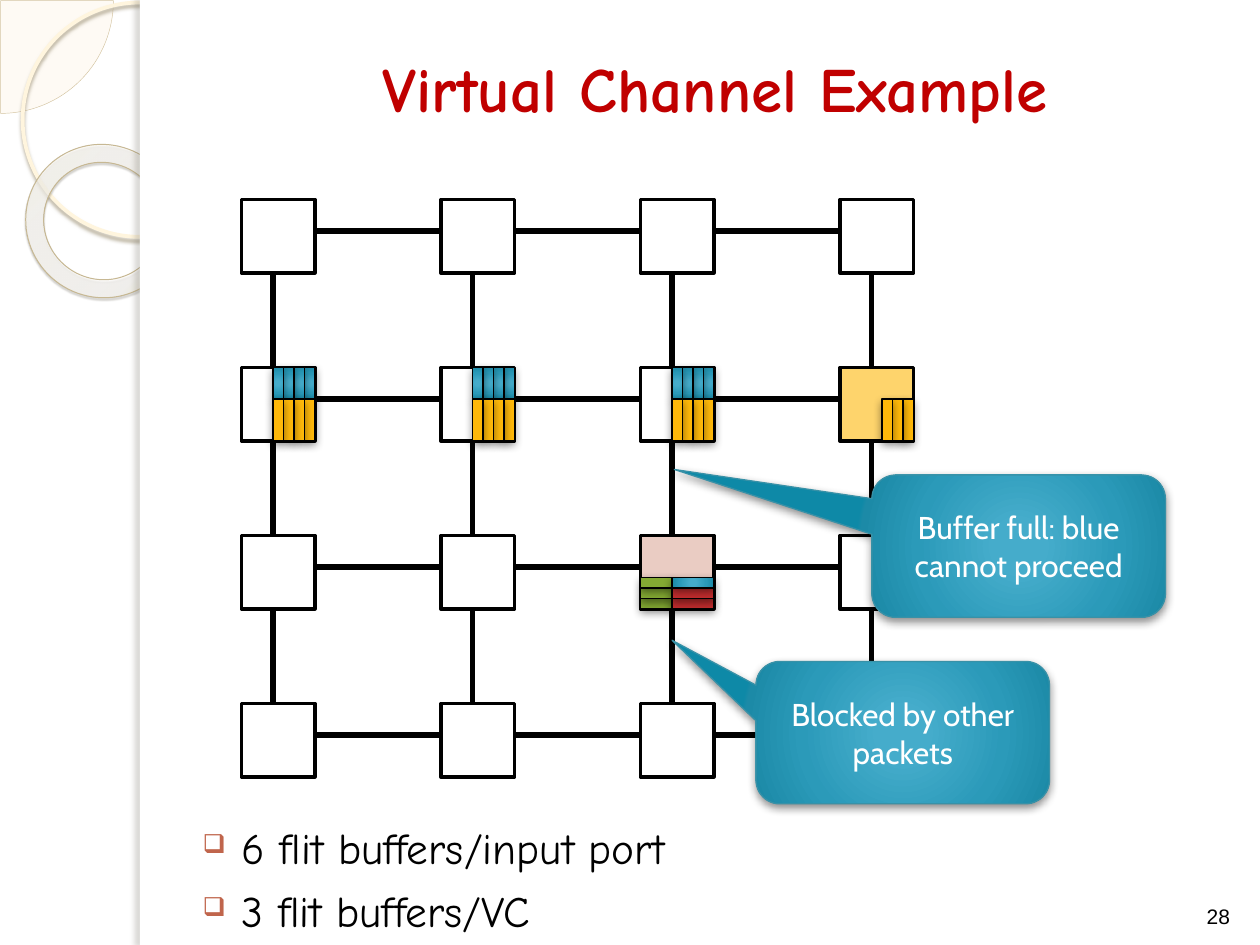
from pptx import Presentation
from pptx.dml.color import RGBColor
from pptx.enum.shapes import MSO_CONNECTOR, MSO_SHAPE as Preset
from pptx.enum.text import MSO_ANCHOR as Anchor, PP_ALIGN as Align
from pptx.oxml import parse_xml
from pptx.oxml.ns import nsdecls, qn
from pptx.oxml.xmlchemy import OxmlElement
from pptx.util import Inches, Pt

BLACK = RGBColor(0x00, 0x00, 0x00)
WHITE = RGBColor(0xFF, 0xFF, 0xFF)
TITLE_RED = RGBColor(0xC0, 0x00, 0x00)
BULLET_RED = RGBColor(0xC0, 0x65, 0x4C)
YELLOW = RGBColor(0xFE, 0xB8, 0x0A)
GREEN = RGBColor(0x84, 0xAA, 0x33)
RED = RGBColor(0xC3, 0x2D, 0x2E)
PINK_NODE = RGBColor(0xEA, 0xCC, 0xC3)
YELLOW_NODE = RGBColor(0xFE, 0xD4, 0x6C)
CALLOUT_LINE = RGBColor(0x38, 0x91, 0xA7)
PIE_FILL = RGBColor(0xFE, 0xFA, 0xF4)
PIE_LINE = RGBColor(0xD3, 0xC3, 0x9F)
RING_LINE = RGBColor(0xFF, 0xF5, 0xDE)
RING_SHADOW = RGBColor(0xB0, 0xA6, 0x8F)
DONUT_LINE = RGBColor(0xC7, 0xB8, 0x93)
DONUT_SHADOW = RGBColor(0x5A, 0x54, 0x44)
EDGE_SHADOW = RGBColor(0x73, 0x6F, 0x63)

BLUE = ([(0, "45ACCC", 100), (15, "45ACCB", 100), (62, "2B9AB9", 100),
         (97, "1C8AA7", 100), (100, "0E89A7", 100)], (50, 50, 50, 50))
CREAM = ([(0, "FFFCF6", 70), (70, "FFFEFB", 55), (100, "F0D28E", 60)],
         (-408, -50, 508, 150))
SOFT_SHADOW = (BLACK, 43, 5, 2, 90)

UNIT = 1 / 12
NODE = 7
PORT = 3
COLUMNS = [23 + 19 * index for index in range(4)]
ROWS = [19 + 16 * index for index in range(4)]


def set_gradient(shape, gradient):
    """Give a shape a circular gradient of (position, colour, opacity) stops."""
    stops, (left, top, right, bottom) = gradient
    stop_xml = "".join(
        f'<a:gs pos="{position * 1000}"><a:srgbClr val="{color}">'
        f'<a:alpha val="{opacity * 1000}"/></a:srgbClr></a:gs>'
        for position, color, opacity in stops)
    shape.fill.background()
    properties = shape._element.spPr
    properties.replace(properties.find(qn("a:noFill")), parse_xml(
        f'<a:gradFill {nsdecls("a")} rotWithShape="1"><a:gsLst>{stop_xml}</a:gsLst>'
        f'<a:path path="circle"><a:fillToRect l="{left * 1000}" t="{top * 1000}" '
        f'r="{right * 1000}" b="{bottom * 1000}"/></a:path></a:gradFill>'))


def set_shadow(shape, shadow):
    """Give a shape an outer shadow, or none."""
    shape.shadow.inherit = False
    if shadow:
        color, opacity, blur, distance, angle = shadow
        shape._element.spPr.find(qn("a:effectLst")).append(parse_xml(
            f'<a:outerShdw {nsdecls("a")} blurRad="{Pt(blur)}" dist="{Pt(distance)}" '
            f'dir="{angle * 60000}" algn="ctr" rotWithShape="0"><a:srgbClr val="{color}">'
            f'<a:alpha val="{opacity * 1000}"/></a:srgbClr></a:outerShdw>'))


def add_figure(page, preset, place, fill=None, line=None, shadow=None, adjust=()):
    """Add a preset shape with its fill, outline, shadow and adjustments."""
    shape = page.shapes.add_shape(preset, *map(Inches, place))
    for index, value in enumerate(adjust):
        shape.adjustments[index] = value
    if fill is None:
        shape.fill.background()
    elif isinstance(fill, RGBColor):
        shape.fill.solid()
        shape.fill.fore_color.rgb = fill
    else:
        set_gradient(shape, fill)
    if line:
        color, width = line
        shape.line.color.rgb = color
        shape.line.width = Pt(width)
    else:
        shape.line.fill.background()
    set_shadow(shape, shadow)
    return shape


def write(para, text, size, font, color, bold=False):
    """Add one formatted run to a paragraph."""
    span = para.add_run()
    span.text = text
    span.font.size = Pt(size)
    span.font.name = font
    span.font.color.rgb = color
    span.font.bold = bold


def add_label(page, place, anchor, *style, **options):
    """Add a text box with one centred line."""
    frame = page.shapes.add_textbox(*map(Inches, place)).text_frame
    frame.word_wrap = True
    frame.vertical_anchor = anchor
    frame.paragraphs[0].alignment = Align.CENTER
    write(frame.paragraphs[0], *style, **options)


def add_bullets(page, place, lines):
    """Add a list with square bullets."""
    frame = page.shapes.add_textbox(*map(Inches, place)).text_frame
    frame.word_wrap = True
    for index, text in enumerate(lines):
        para = frame.add_paragraph() if index else frame.paragraphs[0]
        para.space_before = Pt(6)
        write(para, text, 24.8, "Comic Neue", BLACK)
        properties = para._p.get_or_add_pPr()
        properties.set("marL", str(Inches(0.4)))
        properties.set("indent", str(Inches(-0.31)))
        for xml in (f'<a:buClr {nsdecls("a")}><a:srgbClr val="{BULLET_RED}"/></a:buClr>',
                    f'<a:buSzPct {nsdecls("a")} val="60000"/>',
                    f'<a:buChar {nsdecls("a")} char="❑"/>'):
            properties.append(parse_xml(xml))


def add_link(page, *ends):
    """Add a black line between two grid points."""
    link = page.shapes.add_connector(
        MSO_CONNECTOR.STRAIGHT, *(Inches(end * UNIT) for end in ends))
    link.line.color.rgb = BLACK
    link.line.width = Pt(3)
    link._element.spPr.append(OxmlElement("a:effectLst"))


def add_mesh(page):
    """Add the four by four nodes and the links between neighbours."""
    fills = {(2, 2): PINK_NODE, (3, 1): YELLOW_NODE}
    for row, y in enumerate(ROWS):
        for column, x in enumerate(COLUMNS):
            place = [length * UNIT for length in (x, y, NODE, NODE)]
            add_figure(page, Preset.RECTANGLE, place, fills.get((column, row)), (BLACK, 2))
    for y in ROWS:
        for start, end in zip(COLUMNS, COLUMNS[1:]):
            add_link(page, start + NODE, y + PORT, end, y + PORT)
    for x in COLUMNS:
        for start, end in zip(ROWS, ROWS[1:]):
            add_link(page, x + PORT, start + NODE, x + PORT, end)


def add_flits(page, x, y, width, height, fills, across):
    """Add a run of buffer flits, side by side or stacked, from last to first."""
    for index, fill in reversed(list(enumerate(fills))):
        left, top = (x + index, y) if across else (x, y + index)
        place = [length * UNIT for length in (left, top, width, height)]
        add_figure(page, Preset.RECTANGLE, place, fill, (BLACK, 0.75), SOFT_SHADOW)


def add_callout(page, left, top, tip, text):
    """Add a blue callout whose tip is given as shares of its size."""
    box = add_figure(page, Preset.ROUNDED_RECTANGULAR_CALLOUT, (left, top, 2.33, 1.13),
                     BLUE, (CALLOUT_LINE, 0.75), SOFT_SHADOW, (*tip, 0.167))
    box.text_frame.word_wrap = True
    box.text_frame.vertical_anchor = Anchor.MIDDLE
    para = box.text_frame.paragraphs[0]
    para.alignment = Align.CENTER
    write(para, text, 18, "Cabin", WHITE)


def add_side_decoration(page):
    """Add the rings on the left and the white panel over them."""
    add_figure(page, Preset.PIE, (-0.89, -0.89, 1.79, 1.79), PIE_FILL, (PIE_LINE, 0.25),
               adjust=(0, 54.02))
    add_figure(page, Preset.OVAL, (0.18, 0.02, 1.86, 1.86), None, (RING_LINE, 2.15),
               (RING_SHADOW, 85, 2, 2, 90))
    donut = add_figure(page, Preset.DONUT, (0.2, 1.15, 1.23, 1.21), CREAM,
                       (DONUT_LINE, 0.58), (DONUT_SHADOW, 35, 1, 1.2, 75), (0.118,))
    donut.rotation = 38.6
    add_figure(page, Preset.RECTANGLE, (1.11, 0, 8.89, 7.5), WHITE)
    add_figure(page, Preset.RECTANGLE, (1.11, 0, 0.08, 7.5), WHITE,
               shadow=(EDGE_SHADOW, 25, 3, 3, 180))


def main():
    """Build the slide and save it."""
    deck = Presentation()
    deck.slide_width, deck.slide_height = Inches(10), Inches(7.5)
    page = deck.slides.add_slide(deck.slide_layouts[6])
    add_side_decoration(page)
    add_label(page, (1.58, 0.3, 8.19, 0.78), Anchor.MIDDLE,
              "Virtual Channel Example", 36, "Comic Neue", TITLE_RED, bold=True)
    add_bullets(page, (1.42, 6.47, 8.08, 0.87),
                ["6 flit buffers/input port", "3 flit buffers/VC"])
    add_mesh(page)
    for x in COLUMNS[:3]:
        add_flits(page, x + PORT, ROWS[1], 1, 3, [BLUE] * 4, True)
        add_flits(page, x + PORT, ROWS[1] + PORT, 1, 4, [YELLOW] * 4, True)
    add_flits(page, COLUMNS[3] + 4, ROWS[1] + PORT, 1, 4, [YELLOW] * 3, True)
    add_flits(page, COLUMNS[2], ROWS[2] + 4, 3, 1, [GREEN] * 3, False)
    add_flits(page, COLUMNS[2] + PORT, ROWS[2] + 4, 4, 1, [BLUE, RED, RED], False)
    add_callout(page, 6, 5.25, (-0.786, -0.649), "Blocked by other packets")
    add_callout(page, 6.92, 3.77, (-1.173, -0.539), "Buffer full: blue cannot proceed")
    add_label(page, (9.42, 6.9, 0.5, 0.52), Anchor.BOTTOM, "28", 12, "Arial", BLACK)
    deck.save("out.pptx")


if __name__ == "__main__":
    main()
